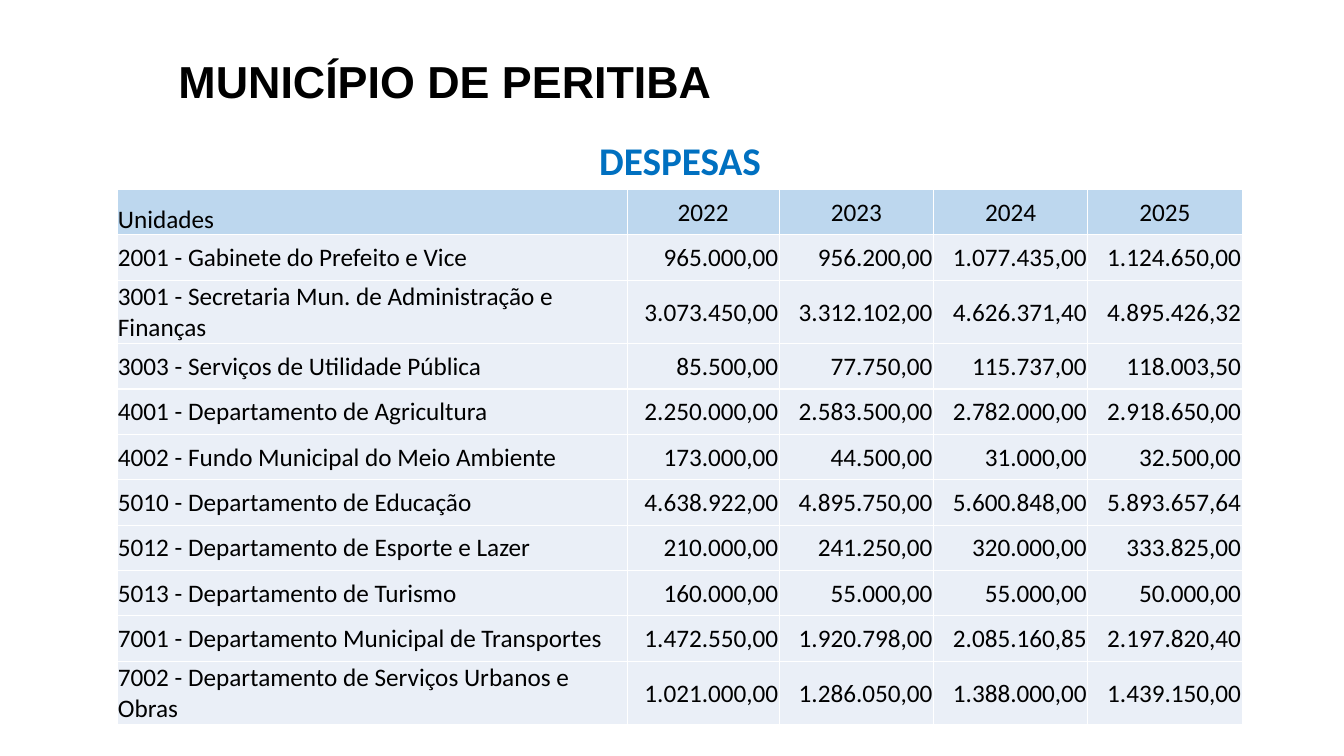
from typing import NamedTuple

from lxml.etree import SubElement
from pptx import Presentation
from pptx.dml.color import RGBColor
from pptx.enum.text import MSO_ANCHOR, MSO_AUTO_SIZE, PP_ALIGN
from pptx.oxml.ns import qn
from pptx.util import Inches, Pt


class Style(NamedTuple):
    size: int
    font: str
    color: str
    bold: bool = False
    align: PP_ALIGN = PP_ALIGN.LEFT


class Expense(NamedTuple):
    unit: str
    y2022: str
    y2023: str
    y2024: str
    y2025: str


HEADER = Expense("Unidades", "2022", "2023", "2024", "2025")
EXPENSES = [
    Expense("2001 - Gabinete do Prefeito e Vice",
            "965.000,00", "956.200,00", "1.077.435,00", "1.124.650,00"),
    Expense("3001 - Secretaria Mun. de Administração e Finanças",
            "3.073.450,00", "3.312.102,00", "4.626.371,40", "4.895.426,32"),
    Expense("3003 - Serviços de Utilidade Pública",
            "85.500,00", "77.750,00", "115.737,00", "118.003,50"),
    Expense("4001 - Departamento de Agricultura",
            "2.250.000,00", "2.583.500,00", "2.782.000,00", "2.918.650,00"),
    Expense("4002 - Fundo Municipal do Meio Ambiente",
            "173.000,00", "44.500,00", "31.000,00", "32.500,00"),
    Expense("5010 - Departamento de Educação",
            "4.638.922,00", "4.895.750,00", "5.600.848,00", "5.893.657,64"),
    Expense("5012 - Departamento de Esporte e Lazer",
            "210.000,00", "241.250,00", "320.000,00", "333.825,00"),
    Expense("5013 - Departamento de Turismo",
            "160.000,00", "55.000,00", "55.000,00", "50.000,00"),
    Expense("7001 - Departamento Municipal de Transportes",
            "1.472.550,00", "1.920.798,00", "2.085.160,85", "2.197.820,40"),
    Expense("7002 - Departamento de Serviços Urbanos e Obras",
            "1.021.000,00", "1.286.050,00", "1.388.000,00", "1.439.150,00"),
]
COLUMN_WIDTHS = (5.06, 1.51, 1.53, 1.53, 1.53)
ROW_HEIGHT, TALL_ROW_HEIGHT = 0.45, 0.63
TALL_ROWS = (2, 10)
TABLE_LEFT, TABLE_WIDTH = Inches(1.16), Inches(11.17)


def rgb(color: str) -> RGBColor:
    return RGBColor.from_string(color)


def write(tf, text: str, style: Style) -> None:
    tf.text = text
    p = tf.paragraphs[0]
    p.alignment = style.align
    font = p.runs[0].font
    font.size, font.name, font.bold = Pt(style.size), style.font, style.bold
    font.color.rgb = rgb(style.color)


def add_borders(cell, color: str) -> None:
    """Give the cell 1 pt lines; call before the fill is set."""
    tc_pr = cell._tc.get_or_add_tcPr()
    for side in ("lnL", "lnR", "lnT", "lnB"):
        ln = SubElement(tc_pr, qn(f"a:{side}"), w=str(Pt(1)))
        fill = SubElement(ln, qn("a:solidFill"))
        SubElement(fill, qn("a:srgbClr"), val=color)


def format_cell(cell, text: str, row: int, col: int) -> None:
    is_header = row == 0
    if col == 0:
        align = PP_ALIGN.LEFT
    else:
        align = PP_ALIGN.CENTER if is_header else PP_ALIGN.RIGHT
    write(cell.text_frame, text, Style(18, "Calibri", "000000", align=align))
    cell.margin_left = cell.margin_right = cell.margin_top = Inches(0.01)
    cell.margin_bottom = 0
    cell.vertical_anchor = (MSO_ANCHOR.BOTTOM if is_header and col == 0
                            else MSO_ANCHOR.MIDDLE)
    add_borders(cell, "FFFFFF")
    cell.fill.solid()
    cell.fill.fore_color.rgb = rgb("BDD7EE" if is_header else "EAEFF7")


def add_expense_table(slide) -> None:
    rows = [HEADER, *EXPENSES]
    table = slide.shapes.add_table(len(rows), len(COLUMN_WIDTHS), TABLE_LEFT,
                                   Inches(1.88), TABLE_WIDTH, Inches(5.29)).table
    for column, width in zip(table.columns, COLUMN_WIDTHS):
        column.width = Inches(width)
    for i, expense in enumerate(rows):
        table.rows[i].height = Inches(TALL_ROW_HEIGHT if i in TALL_ROWS else ROW_HEIGHT)
        for j, text in enumerate(expense):
            format_cell(table.cell(i, j), text, i, j)


def main() -> None:
    prs = Presentation()
    prs.slide_width, prs.slide_height = Inches(13.33), Inches(7.5)
    slide = prs.slides.add_slide(prs.slide_layouts[5])

    title = slide.shapes.title
    title.left, title.top = Inches(1.67), Inches(0.48)
    title.width, title.height = Inches(8.03), Inches(0.64)
    write(title.text_frame, "MUNICÍPIO DE PERITIBA", Style(32, "Arial", "000000", True))
    title.text_frame.vertical_anchor = MSO_ANCHOR.TOP
    title.text_frame.auto_size = MSO_AUTO_SIZE.SHAPE_TO_FIT_TEXT

    add_expense_table(slide)

    heading = slide.shapes.add_textbox(TABLE_LEFT, Inches(1.3), TABLE_WIDTH, Inches(0.57))
    tf = heading.text_frame
    tf.word_wrap = True
    tf.auto_size = MSO_AUTO_SIZE.SHAPE_TO_FIT_TEXT
    write(tf, "DESPESAS", Style(28, "Calibri", "0070C0", True, PP_ALIGN.CENTER))

    prs.save("out.pptx")


if __name__ == "__main__":
    main()
